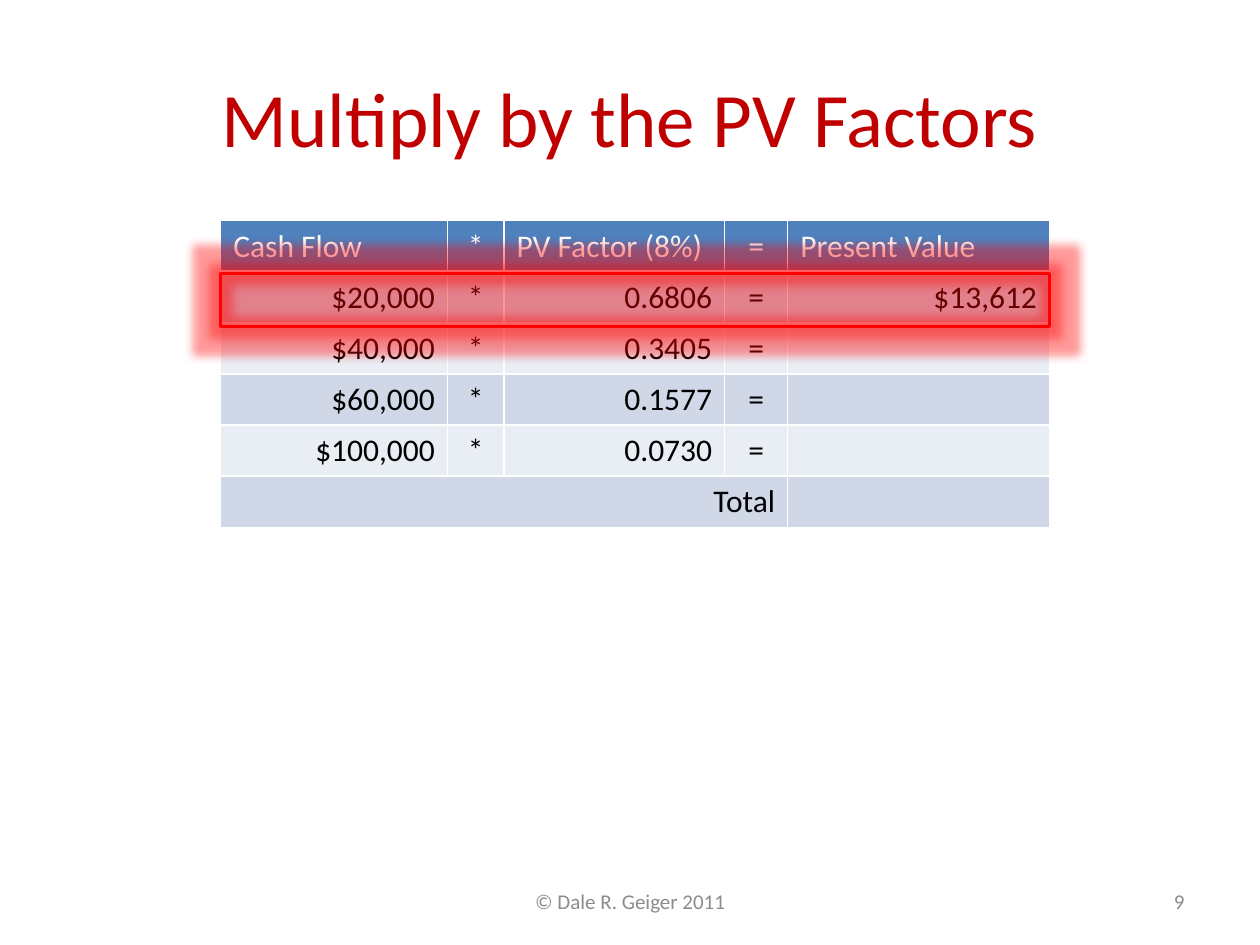
"""Build the slide that multiplies cash flows by their present value factors."""
from lxml.etree import SubElement
from pptx import Presentation
from pptx.dml.color import RGBColor
from pptx.enum.shapes import MSO_SHAPE as Shape
from pptx.enum.text import MSO_ANCHOR as Anchor, PP_ALIGN as Align
from pptx.oxml.ns import qn
from pptx.util import Cm, Pt

FONT = "Calibri"
WHITE = RGBColor(0xFF, 0xFF, 0xFF)
BLACK = RGBColor(0, 0, 0)
TITLE_RED = RGBColor(0xC0, 0, 0)
BRIGHT_RED = RGBColor(0xFF, 0, 0)
GREY = RGBColor(0x8C, 0x8C, 0x8C)
HEADER_BLUE = RGBColor(0x4F, 0x81, 0xBD)
BANDS = [RGBColor(0xE9, 0xED, 0xF4), RGBColor(0xD0, 0xD8, 0xE8)]


def write(frame, text, size, color, align):
    para = frame.paragraphs[0]
    para.alignment = align
    span = para.add_run()
    span.text = text
    span.font.name = FONT
    span.font.size = Pt(size)
    span.font.color.rgb = color


def add_border(cell, side, points):
    line = SubElement(cell._tc.get_or_add_tcPr(), qn(f"a:ln{side}"), w=str(Pt(points)))
    fill = SubElement(line, qn("a:solidFill"))
    SubElement(fill, qn("a:srgbClr"), val=str(WHITE))


deck = Presentation()
deck.slide_width, deck.slide_height = Cm(25.4), Cm(19.05)
page = deck.slides.add_slide(deck.slide_layouts[6])

LABELS = [
    ("Multiply by the PV Factors", 1.27, 0.76, 22.86, 3.18, 44, TITLE_RED, Align.CENTER),
    ("© Dale R. Geiger 2011", 8.68, 17.65, 8.05, 1.02, 12, GREY, Align.CENTER),
    ("9", 18.21, 17.65, 5.92, 1.02, 12, GREY, Align.RIGHT),
]
for text, left, top, width, height, size, color, align in LABELS:
    box = page.shapes.add_textbox(Cm(left), Cm(top), Cm(width), Cm(height))
    box.text_frame.word_wrap = True
    box.text_frame.vertical_anchor = Anchor.MIDDLE
    write(box.text_frame, text, size, color, align)

ROWS = [
    ("Cash Flow", "*", "PV Factor (8%)", "=", "Present Value"),
    ("$20,000", "*", "0.6806", "=", "$13,612"),
    ("$40,000", "*", "0.3405", "=", ""),
    ("$60,000", "*", "0.1577", "=", ""),
    ("$100,000", "*", "0.0730", "=", ""),
    ("Total", "", "", "", ""),
]
COLUMN_WIDTHS = [4.57, 1.14, 4.45, 1.27, 5.28]
LEFT, TOP, ROW_HEIGHT = 4.45, 4.45, 1.03
WIDTH = sum(COLUMN_WIDTHS)

table = page.shapes.add_table(
    len(ROWS), len(COLUMN_WIDTHS), Cm(LEFT), Cm(TOP), Cm(WIDTH), Cm(ROW_HEIGHT * len(ROWS))
).table
for column, width in zip(table.columns, COLUMN_WIDTHS):
    column.width = Cm(width)
for r, values in enumerate(ROWS):
    table.rows[r].height = Cm(ROW_HEIGHT)
    header = r == 0
    for c, value in enumerate(values):
        cell = table.cell(r, c)
        for side in "LRTB":
            heavy = (header and side == "B") or (r == 1 and side == "T")
            add_border(cell, side, 3 if heavy else 1)
        cell.fill.solid()
        cell.fill.fore_color.rgb = HEADER_BLUE if header else BANDS[r % 2]
        if value in ("*", "="):
            align = Align.CENTER
        else:
            align = Align.LEFT if header else Align.RIGHT
        if value:
            write(cell.text_frame, value, 18, WHITE if header else BLACK, align)
table.cell(5, 0).merge(table.cell(5, 3))

highlight = page.shapes.add_shape(
    Shape.RECTANGLE, Cm(LEFT), Cm(TOP + ROW_HEIGHT + 0.03), Cm(WIDTH), Cm(1.07)
)
highlight.fill.background()
highlight.line.color.rgb = BRIGHT_RED
highlight.line.width = Pt(2)
highlight.shadow.inherit = False
effects = highlight._element.spPr.find(qn("a:effectLst"))
glow = SubElement(effects, qn("a:glow"), rad=str(Pt(11)))
glow_color = SubElement(glow, qn("a:srgbClr"), val=str(BRIGHT_RED))
SubElement(glow_color, qn("a:alpha"), val="40000")

deck.save("out.pptx")
